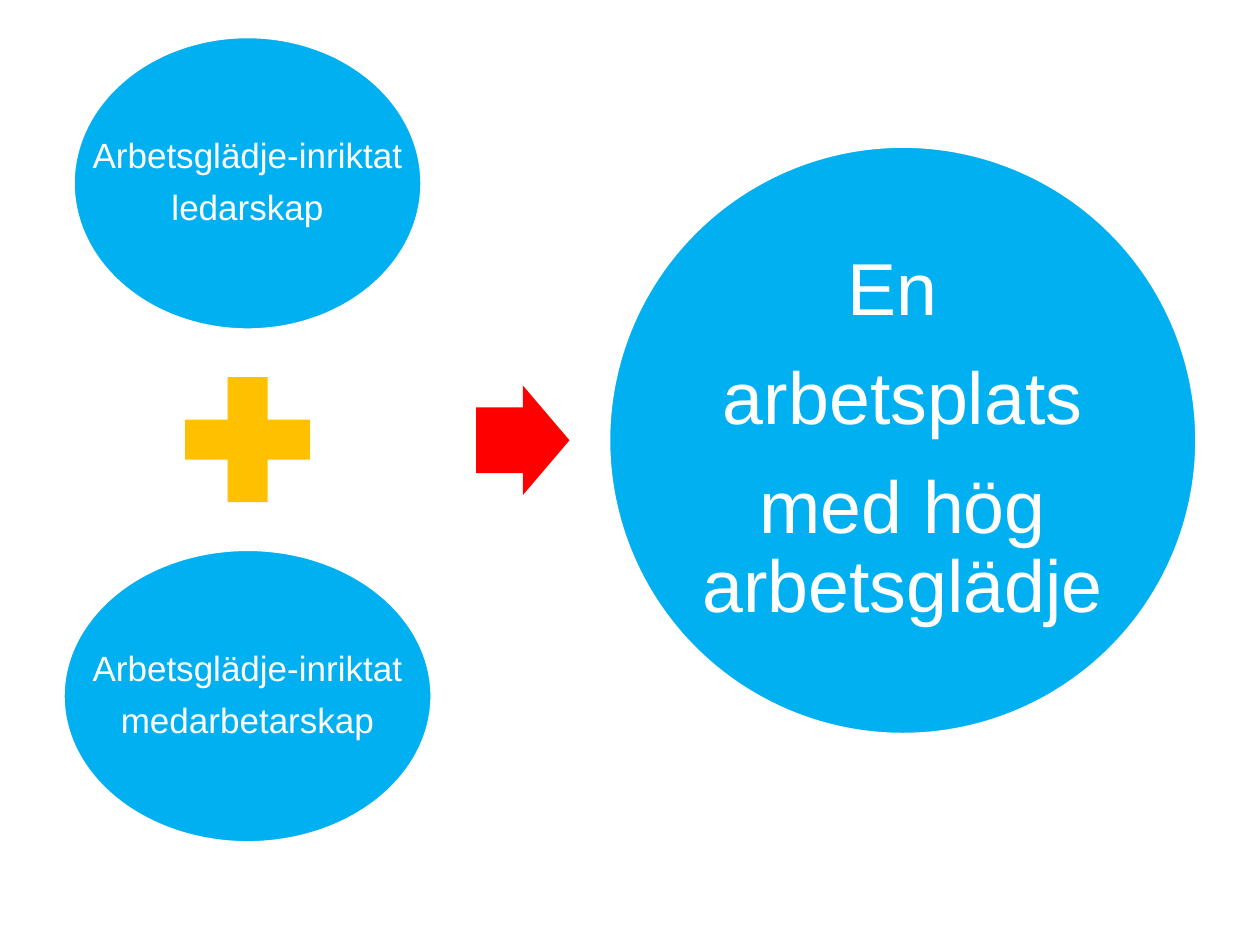
from pptx import Presentation
from pptx.dml.color import RGBColor
from pptx.enum import shapes, text
from pptx.util import Inches, Pt

KIND = shapes.MSO_SHAPE
BLUE, GOLD, RED, WHITE = "00B0F0", "FFC000", "FF0000", "FFFFFF"


def paint(fmt, hue):
    fmt.solid()
    fmt.fore_color.rgb = RGBColor.from_string(hue)


def draw(slide, kind, box, hue, edge=None):
    shape = slide.shapes.add_shape(kind, *map(Inches, box))
    shape.shadow.inherit = False
    paint(shape.fill, hue)
    if edge:
        paint(shape.line.fill, edge)
        shape.line.width = Pt(2)
    else:
        shape.line.fill.background()
    return shape


def write(shape, lines, size=20, inset=0.03, after=8, wrap=False, hue=WHITE):
    frame = shape.text_frame
    frame.word_wrap = wrap
    frame.vertical_anchor = text.MSO_ANCHOR.MIDDLE
    frame.margin_left = frame.margin_right = Inches(inset)
    frame.margin_top = frame.margin_bottom = Inches(inset)
    for i, line in enumerate(lines):
        para = frame.add_paragraph() if i else frame.paragraphs[0]
        para.alignment = text.PP_ALIGN.CENTER
        para.line_spacing = 0.9
        para.space_after = Pt(after)
        run = para.add_run()
        run.text = line
        run.font.size = Pt(size)
        run.font.name = "Arial"
        paint(run.font.fill, hue)


def disc(slide, box, lines, **form):
    write(draw(slide, KIND.OVAL, box, BLUE, WHITE), lines, **form)


def parts(slide, left, top, width, height):
    mid = left + width / 2
    tall, plus = 2.33, 1.35
    rows = [(top, 2.77, "ledarskap"),
            (top + height - tall, width, "medarbetarskap")]
    for y, wide, word in rows:
        disc(slide, (mid - wide / 2, y, wide, tall),
             ["Arbetsglädje-inriktat", word])
    draw(slide, KIND.MATH_PLUS,
         (mid - plus / 2, top + (height - plus) / 2, plus, plus), GOLD)


def arrow(slide, *box):
    shape = draw(slide, KIND.RIGHT_ARROW, box, RED)
    shape.adjustments[0] = 0.6
    shape.adjustments[1] = 0.5


def goal(slide, *box):
    disc(slide, box, ["En ", "arbetsplats", "med hög arbetsglädje"],
         size=42, inset=0.06, after=17, wrap=True)


def main():
    deck = Presentation()
    deck.slide_width, deck.slide_height = Inches(10), Inches(7.5)
    slide = deck.slides.add_slide(deck.slide_layouts[6])
    parts(slide, 0.5, 0.29, 2.93, 6.4)
    arrow(slide, 3.78, 3.06, 0.74, 0.87)
    goal(slide, 4.83, 1.16, 4.67, 4.67)
    deck.save("out.pptx")


if __name__ == "__main__":
    main()
